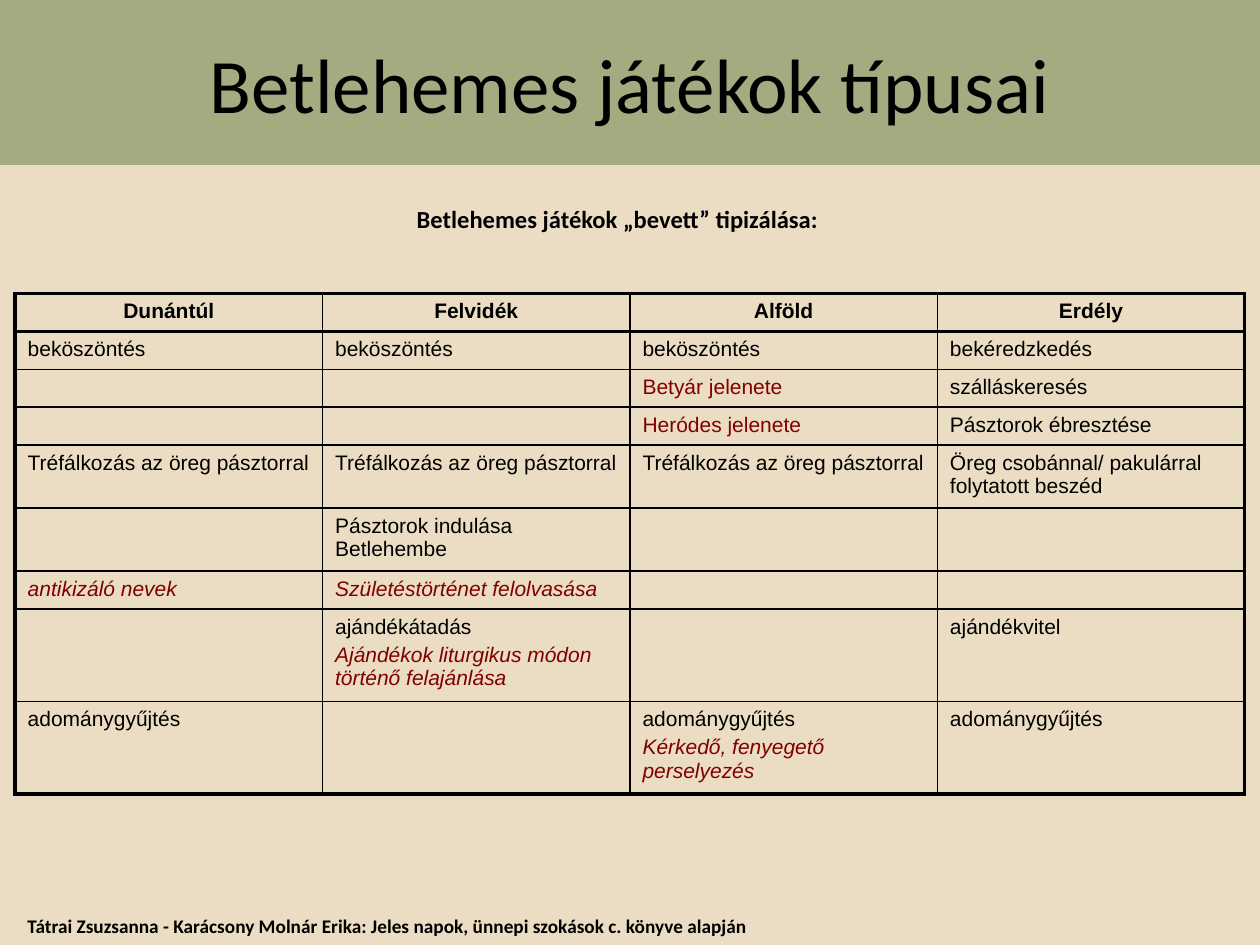
from dataclasses import dataclass

from pptx import Presentation
from pptx import util as u
from pptx.dml import color
from pptx.enum import shapes, text
from pptx.oxml import ns
from lxml import etree

BLACK, MAROON, SAND, SAGE = "000000", "800000", "EBDDC3", "A5AB81"
THICK, THIN = 2.25, 1
COLUMN_WIDTH = 2.44
ROW_HEIGHTS = [0.29, 0.28, 0.29, 0.28, 0.48, 0.48, 0.28, 0.69, 0.7]


@dataclass(frozen=True)
class Style:
    size: float
    font: str = "Calibri"
    colour: str = BLACK
    bold: bool = False
    italic: bool = False
    align: text.PP_ALIGN = text.PP_ALIGN.LEFT


@dataclass(frozen=True)
class Line:
    words: str
    style: Style


@dataclass(frozen=True)
class Box:
    left: float
    top: float
    width: float
    height: float

    def lengths(self) -> tuple:
        return tuple(u.Inches(n) for n in (self.left, self.top, self.width, self.height))


HEADER = Style(12, "Arial", bold=True, align=text.PP_ALIGN.CENTER)
PLAIN = Style(12, "Arial")
RED = Style(12, "Arial", MAROON)
RED_ITALIC = Style(12, "Arial", MAROON, italic=True)

GREETING = [Line("beköszöntés", PLAIN)]
JOKING = [Line("Tréfálkozás az öreg pásztorral", PLAIN)]
COLLECTION = Line("adománygyűjtés", PLAIN)
ROWS = [
    [[Line(region, HEADER)] for region in ("Dunántúl", "Felvidék", "Alföld", "Erdély")],
    [GREETING, GREETING, GREETING, [Line("bekéredzkedés", PLAIN)]],
    [[], [], [Line("Betyár jelenete", RED)], [Line("szálláskeresés", PLAIN)]],
    [[], [], [Line("Heródes jelenete", RED)], [Line("Pásztorok ébresztése", PLAIN)]],
    [JOKING, JOKING, JOKING, [Line("Öreg csobánnal/ pakulárral folytatott beszéd", PLAIN)]],
    [[], [Line("Pásztorok indulása Betlehembe", PLAIN)], [], []],
    [[Line("antikizáló nevek", RED_ITALIC)],
     [Line("Születéstörténet felolvasása", RED_ITALIC)], [], []],
    [[], [Line("ajándékátadás", PLAIN),
          Line("Ajándékok liturgikus módon történő felajánlása", RED_ITALIC)],
     [], [Line("ajándékvitel", PLAIN)]],
    [[COLLECTION], [], [COLLECTION, Line("Kérkedő, fenyegető perselyezés", RED_ITALIC)],
     [COLLECTION]],
]


def paint(fill, colour: str) -> None:
    """Give a fill a solid colour."""
    fill.solid()
    fill.fore_color.rgb = color.RGBColor.from_string(colour)


def write(frame, lines: list[Line]) -> None:
    """Write one styled paragraph per line into a text frame."""
    for index, line in enumerate(lines):
        paragraph = frame.add_paragraph() if index else frame.paragraphs[0]
        paragraph.alignment = line.style.align
        if index:
            paragraph.space_before = u.Pt(line.style.size * 0.2)
        run = paragraph.add_run()
        run.text = line.words
        font = run.font
        font.size, font.name = u.Pt(line.style.size), line.style.font
        font.bold, font.italic = line.style.bold, line.style.italic
        paint(font.fill, line.style.colour)


def add_label(slide, box: Box, line: Line) -> None:
    """Add a wrapped text box with one line."""
    frame = slide.shapes.add_textbox(*box.lengths()).text_frame
    frame.word_wrap = True
    write(frame, [line])


def add_title(slide, box: Box, line: Line) -> None:
    """Add the coloured title band."""
    shape = slide.shapes.add_shape(shapes.MSO_SHAPE.RECTANGLE, *box.lengths())
    shape.shadow.inherit = False
    paint(shape.fill, SAGE)
    shape.line.fill.background()
    shape.text_frame.vertical_anchor = text.MSO_ANCHOR.MIDDLE
    write(shape.text_frame, [line])


def set_borders(cell, widths: dict[str, float]) -> None:
    """Draw the black borders of a cell, given points per side."""
    properties = cell._tc.get_or_add_tcPr()
    for side, width in widths.items():
        border = etree.SubElement(properties, ns.qn(f"a:ln{side}"), w=str(u.Pt(width)))
        solid = etree.SubElement(border, ns.qn("a:solidFill"))
        etree.SubElement(solid, ns.qn("a:srgbClr"), val=BLACK)


def add_types_table(slide, left: float, top: float) -> None:
    """Add the table of play types by region."""
    row_count, column_count = len(ROWS), len(ROWS[0])
    box = Box(left, top, COLUMN_WIDTH * column_count, sum(ROW_HEIGHTS))
    table = slide.shapes.add_table(row_count, column_count, *box.lengths()).table
    table.first_row = table.horz_banding = False
    for column in table.columns:
        column.width = u.Inches(COLUMN_WIDTH)
    for r, (row, height) in enumerate(zip(ROWS, ROW_HEIGHTS)):
        table.rows[r].height = u.Inches(height)
        for c, lines in enumerate(row):
            cell = table.cell(r, c)
            set_borders(cell, {
                "L": THICK if c == 0 else THIN,
                "R": THICK if c == column_count - 1 else THIN,
                "T": THICK if r <= 1 else THIN,
                "B": THICK if r in (0, row_count - 1) else THIN,
            })
            cell.fill.background()
            write(cell.text_frame, lines)
            if not lines:
                ending = cell.text_frame.paragraphs[0]._p.get_or_add_endParaRPr()
                ending.set("sz", str(PLAIN.size * 100))


def main() -> None:
    """Build the slide and save it."""
    presentation = Presentation()
    presentation.slide_width, presentation.slide_height = u.Inches(10), u.Inches(7.5)
    slide = presentation.slides.add_slide(presentation.slide_layouts[6])
    paint(slide.background.fill, SAND)
    add_title(slide, Box(0, 0, 10, 1.31),
              Line("Betlehemes játékok típusai", Style(44, align=text.PP_ALIGN.CENTER)))
    add_label(slide, Box(0, 1.57, 9.8, 0.34),
              Line("Betlehemes játékok „bevett” tipizálása:",
                   Style(14, bold=True, align=text.PP_ALIGN.CENTER)))
    add_types_table(slide, 0.12, 2.33)
    add_label(slide, Box(0.12, 7.21, 8.7, 0.29),
              Line("Tátrai Zsuzsanna - Karácsony Molnár Erika: Jeles napok, "
                   "ünnepi szokások c. könyve alapján", Style(11, bold=True)))
    presentation.save("out.pptx")


if __name__ == "__main__":
    main()
